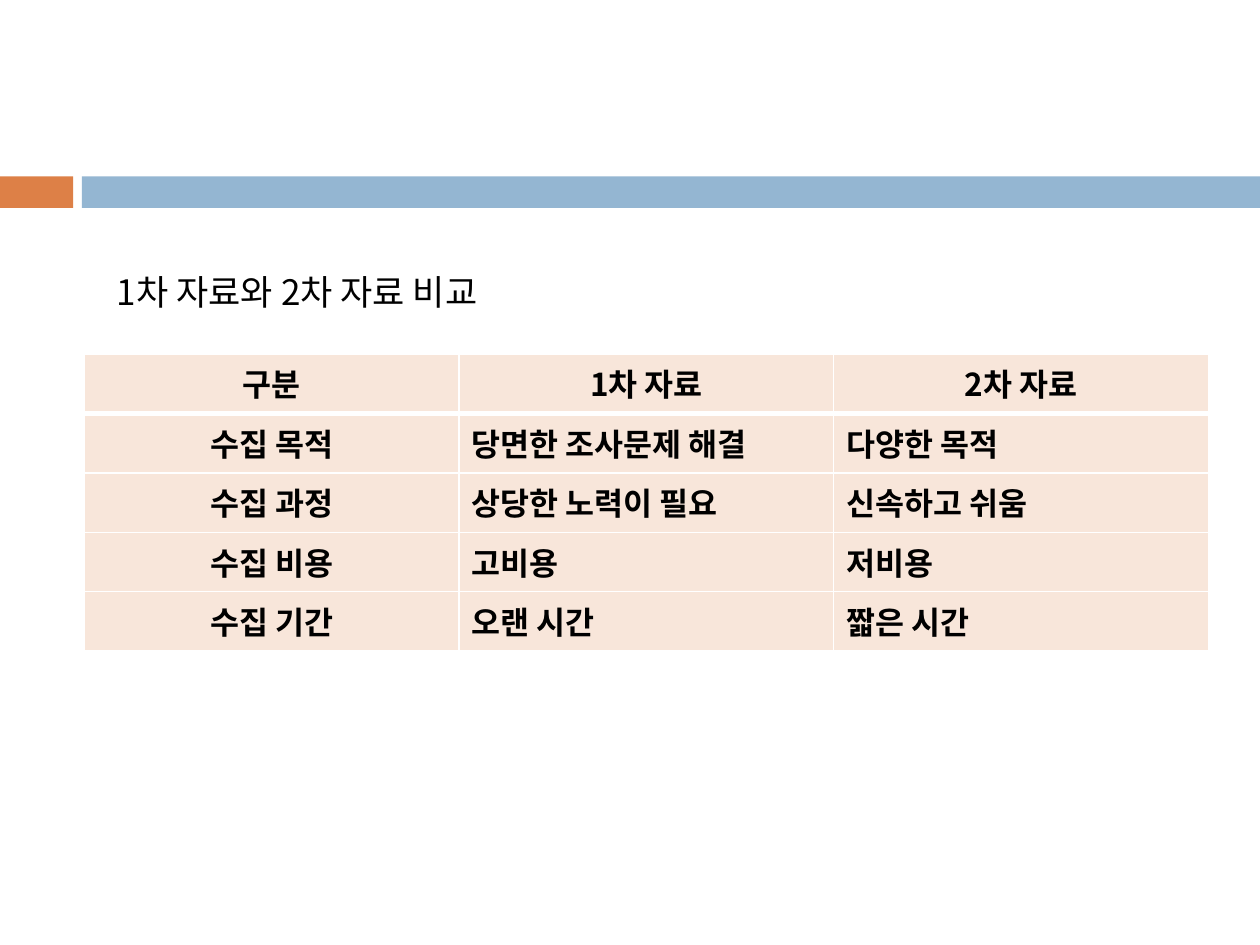
from dataclasses import dataclass

from pptx import Presentation
from pptx.dml.color import RGBColor
from pptx.enum.shapes import MSO_SHAPE as ShapeKind
from pptx.enum.text import MSO_AUTO_SIZE as AutoSize, PP_ALIGN as Align
from pptx.oxml.ns import qn
from pptx.util import Inches, Pt
from lxml.etree import SubElement


@dataclass(frozen=True)
class Theme:
    font: str = "Noto Sans CJK KR"
    text: str = "000000"
    accent: str = "DD8047"
    band: str = "94B6D2"
    cell: str = "F8E6DA"
    border: str = "FFFFFF"
    heading_size: int = 20
    table_size: int = 18
    border_width: int = 1
    header_border_width: int = 3


@dataclass(frozen=True)
class Bar:
    left: float
    width: float
    color: str


THEME = Theme()
BAR_TOP, BAR_HEIGHT = 1.4, 0.25
BARS = [Bar(0, 0.58, THEME.accent), Bar(0.65, 9.35, THEME.band)]
HEADING = "1차 자료와 2차 자료 비교"
ROWS = [
    ("구분", "1차 자료", "2차 자료"),
    ("수집 목적", "당면한 조사문제 해결", "다양한 목적"),
    ("수집 과정", "상당한 노력이 필요", "신속하고 쉬움"),
    ("수집 비용", "고비용", "저비용"),
    ("수집 기간", "오랜 시간", "짧은 시간"),
]


def write_text(paragraph, text: str, size: int, bold: bool = False) -> None:
    run = paragraph.add_run()
    run.text = text
    run.font.color.rgb = RGBColor.from_string(THEME.text)
    for name, value in {"name": THEME.font, "size": Pt(size), "bold": bold}.items():
        setattr(run.font, name, value)
    # Korean glyphs take the East Asian typeface
    SubElement(run.font._element, qn("a:ea"), typeface=THEME.font)


def draw_bar(slide, bar: Bar) -> None:
    shape = slide.shapes.add_shape(
        ShapeKind.RECTANGLE, Inches(bar.left), Inches(BAR_TOP), Inches(bar.width), Inches(BAR_HEIGHT))
    shape.shadow.inherit = False
    shape.fill.solid()
    shape.fill.fore_color.rgb = RGBColor.from_string(bar.color)
    shape.line.fill.background()


def draw_heading(slide) -> None:
    frame = slide.shapes.add_textbox(Inches(0.83), Inches(2.1), Inches(3.54), Inches(0.44)).text_frame
    for name, value in {"word_wrap": True, "auto_size": AutoSize.SHAPE_TO_FIT_TEXT}.items():
        setattr(frame, name, value)
    write_text(frame.paragraphs[0], HEADING, THEME.heading_size)


def set_borders(cell, widths: dict[str, int]) -> None:
    properties = cell._tc.get_or_add_tcPr()
    for position, (side, width) in enumerate(widths.items()):
        line = properties.makeelement(qn(f"a:{side}"), {"w": str(Pt(width))})
        fill = SubElement(line, qn("a:solidFill"))
        SubElement(fill, qn("a:srgbClr"), val=THEME.border)
        properties.insert(position, line)  # borders come before the fill


def draw_table(slide) -> None:
    table = slide.shapes.add_table(
        len(ROWS), len(ROWS[0]), Inches(0.67), Inches(2.81), Inches(8.92), Inches(2.36)).table
    for row_index, values in enumerate(ROWS):
        widths = dict.fromkeys(("lnL", "lnR", "lnT", "lnB"), THEME.border_width)
        if row_index == 0:
            widths["lnB"] = THEME.header_border_width
        elif row_index == 1:
            widths["lnT"] = THEME.header_border_width
        for column_index, text in enumerate(values):
            cell = table.cell(row_index, column_index)
            cell.fill.solid()
            cell.fill.fore_color.rgb = RGBColor.from_string(THEME.cell)
            set_borders(cell, widths)
            paragraph = cell.text_frame.paragraphs[0]
            is_label = row_index == 0 or column_index == 0
            paragraph.alignment = Align.CENTER if is_label else Align.LEFT
            write_text(paragraph, text, THEME.table_size, bold=True)


def main() -> None:
    presentation = Presentation()
    presentation.slide_width, presentation.slide_height = Inches(10), Inches(7.5)
    slide = presentation.slides.add_slide(presentation.slide_layouts[6])

    # Title band
    for bar in BARS:
        draw_bar(slide, bar)

    # Comparison of primary and secondary data
    draw_table(slide)
    draw_heading(slide)

    presentation.save("out.pptx")


if __name__ == "__main__":
    main()
